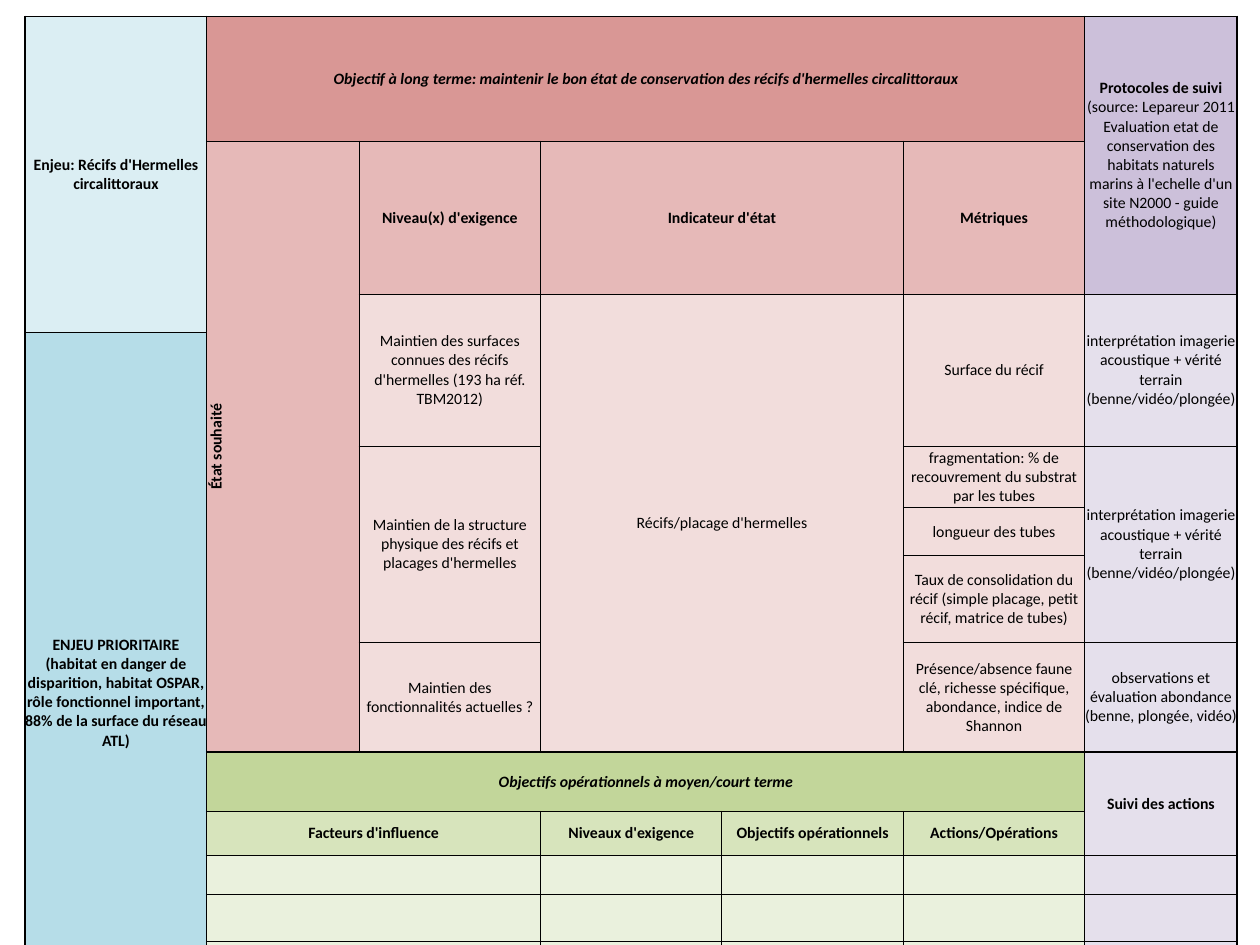
"""Builds a conservation goals table for reef habitats on one slide."""
from dataclasses import dataclass

from lxml.etree import SubElement
from pptx import Presentation
from pptx.dml.color import RGBColor
from pptx.enum.text import MSO_ANCHOR, PP_ALIGN
from pptx.oxml.ns import qn
from pptx.util import Inches, Pt


@dataclass(frozen=True)
class Theme:
    font: str = "Calibri"
    size: float = 9
    thin: float = 0.5
    thick: float = 1
    ink: str = "000000"
    sky: str = "DBEEF3"
    blue: str = "B6DDE8"
    red: str = "D99795"
    rose: str = "E6B9B8"
    blush: str = "F2DDDC"
    violet: str = "CCC0DA"
    lilac: str = "E5E0EC"
    green: str = "C2D69A"
    lime: str = "D7E4BC"
    mint: str = "EAF1DD"


class Board:
    def __init__(self, deck, theme):
        self.theme = theme
        self.slide = deck.slides.add_slide(deck.slide_layouts[6])

    def grid(self, left, top, cols, rows):
        box = (Inches(n) for n in (left, top, sum(cols), sum(rows)))
        self.table = self.slide.shapes.add_table(len(rows), len(cols), *box).table
        self.table.first_row = self.table.horz_banding = False
        for col, width in zip(self.table.columns, cols):
            col.width = Inches(width)
        for row, height in zip(self.table.rows, rows):
            row.height = Inches(height)

    def edge(self, cell, row, col):
        last = len(self.table.rows) - 1
        heavy = {
            "L": col < 2,
            "R": col in (0, len(self.table.columns) - 1),
            "T": row == 0 or (row == SPLIT and col > 0),
            "B": row == last or (row == SPLIT - 1 and col > 0),
        }
        props = cell._tc.get_or_add_tcPr()
        for side, bold in heavy.items():
            width = self.theme.thick if bold else self.theme.thin
            line = SubElement(props, qn(f"a:ln{side}"), w=str(Pt(width)))
            fill = SubElement(line, qn("a:solidFill"))
            SubElement(fill, qn("a:srgbClr"), val=self.theme.ink)

    def cell(self, row, col, text, fill, high=1, wide=1, bold=False, italic=False, plain="", turn=False):
        for r in range(row, row + high):
            for c in range(col, col + wide):
                part = self.table.cell(r, c)
                self.edge(part, r, c)
                part.fill.solid()
                part.fill.fore_color.rgb = RGBColor.from_string(fill)
                part.margin_left = part.margin_right = part.margin_top = part.margin_bottom = 0
        head = self.table.cell(row, col)
        if high * wide > 1:
            head.merge(self.table.cell(row + high - 1, col + wide - 1))
        head.vertical_anchor = MSO_ANCHOR.MIDDLE
        if turn:
            head._tc.get_or_add_tcPr().set("vert", "vert270")
        if text:
            self.label(head.text_frame.paragraphs[0], text, bold, italic, plain)

    def label(self, para, text, bold, italic, plain):
        para.text = text
        para.alignment = PP_ALIGN.CENTER
        font = para.font
        font.name, font.size = self.theme.font, Pt(self.theme.size)
        font.color.rgb = RGBColor.from_string(self.theme.ink)
        font.italic = italic
        if plain:
            para.runs[0].font.bold = bold
            tail = para.add_run()
            tail.text = plain
            tail.font.bold = False
        else:
            font.bold = bold


COLS = [1.44, 1.21, 1.44, 1.44, 1.44, 1.44, 1.21]
ROWS = [0.99, 0.42, 0.04, 0.9, 0.49, 0.38, 0.69, 0.87, 0.47, 0.35, 0.31, 0.37, 0.42, 0.47]
SPLIT = 8
SURVEY = "interprétation imagerie\nacoustique + vérité terrain\n(benne/vidéo/plongée)"


def stake(board, hue):
    """Fills the column that names the stake."""
    board.cell(0, 0, "Enjeu: Récifs d'Hermelles circalittoraux", hue.sky, high=3, bold=True)
    board.cell(3, 0, "ENJEU PRIORITAIRE (habitat en danger de disparition, habitat OSPAR, "
               "rôle fonctionnel important, 88% de la surface du réseau ATL)",
               hue.blue, high=11, bold=True)


def state(board, hue):
    """Fills the long-term goal and the desired state."""
    board.cell(0, 1, "Objectif à long terme: maintenir le bon état de conservation "
               "des récifs d'hermelles circalittoraux", hue.red, wide=5, bold=True, italic=True)
    board.cell(1, 1, "État souhaité", hue.rose, high=7, bold=True, turn=True)
    for col, wide, text in [(2, 1, "Niveau(x) d'exigence"), (3, 2, "Indicateur d'état"), (5, 1, "Métriques")]:
        board.cell(1, col, text, hue.rose, wide=wide, bold=True)
    board.cell(2, 3, "Récifs/placage d'hermelles", hue.blush, high=6, wide=2)
    for row, col, high, text in [
        (2, 2, 2, "Maintien des surfaces connues des récifs d'hermelles (193 ha réf. TBM2012)"),
        (4, 2, 3, "Maintien de la structure physique des récifs et placages d'hermelles"),
        (7, 2, 1, "Maintien des fonctionnalités actuelles ?"),
        (2, 5, 2, "Surface du récif"),
        (4, 5, 1, "fragmentation: % de recouvrement du substrat par les tubes"),
        (5, 5, 1, "longueur des tubes"),
        (6, 5, 1, "Taux de consolidation du récif (simple placage, petit récif, matrice de tubes)"),
        (7, 5, 1, "Présence/absence faune clé, richesse spécifique, abondance, indice de Shannon"),
    ]:
        board.cell(row, col, text, hue.blush, high=high)


def survey(board, hue):
    """Fills the column of survey methods."""
    board.cell(0, 6, "Protocoles de suivi ", hue.violet, high=2, bold=True,
               plain="(source: Lepareur 2011 Evaluation etat de conservation des habitats naturels "
               "marins à l'echelle d'un site N2000 - guide méthodologique)")
    board.cell(2, 6, SURVEY, hue.lilac, high=2)
    board.cell(4, 6, SURVEY, hue.lilac, high=3)
    board.cell(7, 6, "observations et évaluation abondance (benne, plongée, vidéo)", hue.lilac)
    board.cell(SPLIT, 6, "Suivi des actions", hue.lilac, high=2, bold=True)


def action(board, hue):
    """Fills the short-term goals and their open rows."""
    board.cell(SPLIT, 1, "Objectifs opérationnels à moyen/court terme", hue.green,
               wide=5, bold=True, italic=True)
    heads = [(1, 2, "Facteurs d'influence"), (3, 1, "Niveaux d'exigence"),
             (4, 1, "Objectifs opérationnels"), (5, 1, "Actions/Opérations")]
    for col, wide, text in heads:
        board.cell(SPLIT + 1, col, text, hue.lime, wide=wide, bold=True)
        for row in range(SPLIT + 2, len(ROWS)):
            board.cell(row, col, "", hue.mint, wide=wide)
    for row in range(SPLIT + 2, len(ROWS)):
        board.cell(row, 6, "", hue.lilac)


def main():
    """Builds and saves the slide."""
    deck = Presentation()
    deck.slide_width, deck.slide_height = Inches(10), Inches(7.5)
    theme = Theme()
    board = Board(deck, theme)
    board.grid(0.2, 0.13, COLS, ROWS)
    for fill in (stake, state, survey, action):
        fill(board, theme)
    deck.save("out.pptx")


if __name__ == "__main__":
    main()
